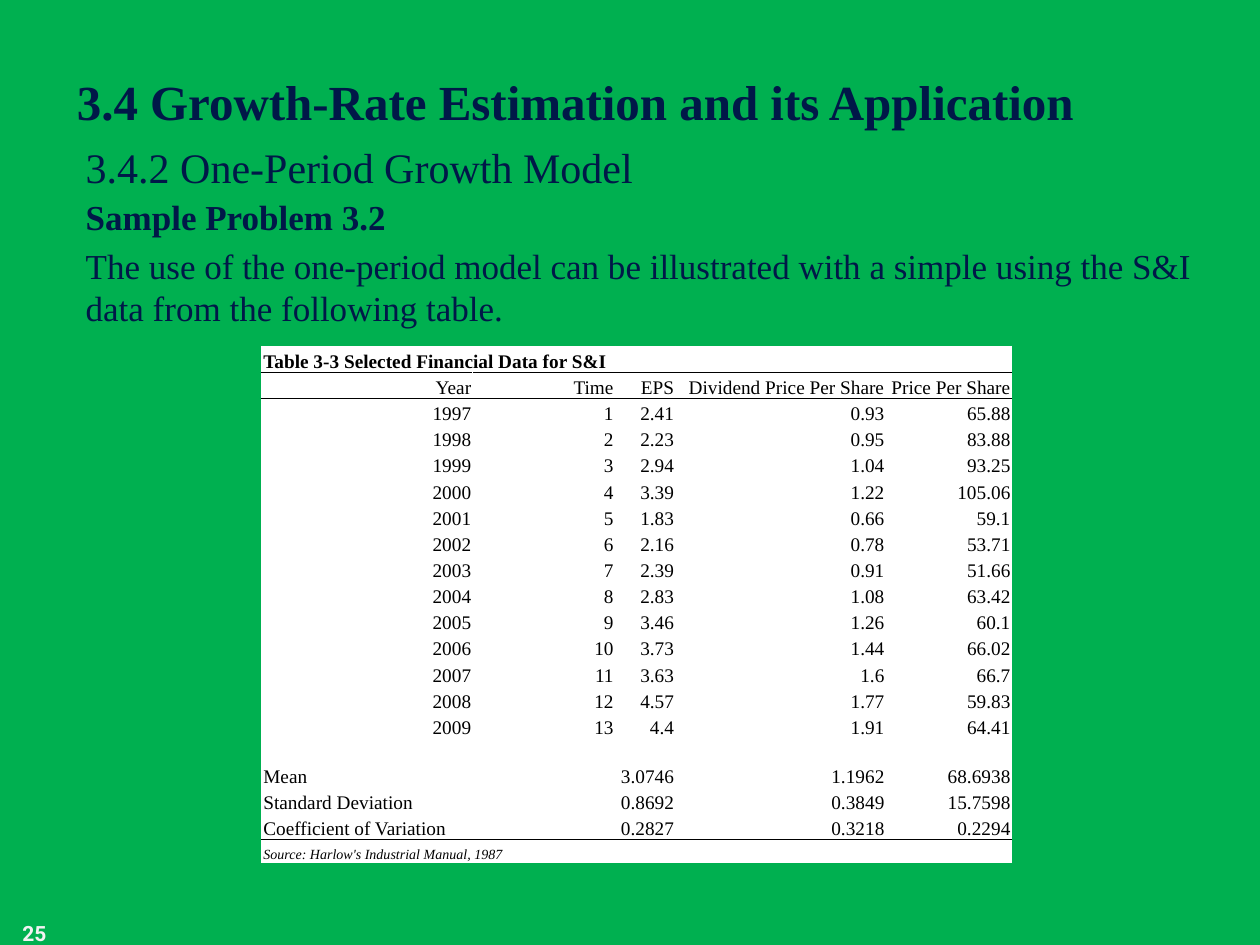
from pptx import Presentation, util as u
from pptx.dml.color import RGBColor
from pptx.enum import text as t
from pptx.oxml import parse_xml
from pptx.oxml.ns import nsdecls

SERIF = "Times New Roman"
NAVY, BLACK, WHITE = "001848", "000000", "FFFFFF"


def color(target, value):
    """Colour a font, or a fill made solid first."""
    if hasattr(target, "solid"):
        target.solid()
        target.fore_color.rgb = RGBColor.from_string(value)
    else:
        target.color.rgb = RGBColor.from_string(value)


def write(paragraph, words, size, value, bold=False, italic=False, name=SERIF):
    run = paragraph.add_run()
    run.text = words
    run.font.name, run.font.size = name, u.Pt(size)
    run.font.bold, run.font.italic = bold, italic
    color(run.font, value)


presentation = Presentation()
presentation.slide_width, presentation.slide_height = u.Inches(10), u.Inches(7.5)
slide = presentation.slides.add_slide(presentation.slide_layouts[3])
color(slide.background.fill, "00B050")

# Title, body and section heading
title, body, section = slide.placeholders
boxes = [
    (body, (0.58, 1.5, 9.08, 5.67), t.MSO_ANCHOR.TOP, t.PP_ALIGN.LEFT, [
        ("Sample Problem 3.2", 20, True),
        ("The use of the one-period model can be illustrated with a simple "
         "using the S&I data from the following table.", 20, False)]),
    (section, (0.58, 1.07, 9.02, 0.5), t.MSO_ANCHOR.TOP, t.PP_ALIGN.LEFT, [
        ("3.4.2 One-Period Growth Model", 24, False)]),
    (title, (0.51, 0.45, 9, 0.7), t.MSO_ANCHOR.MIDDLE, t.PP_ALIGN.LEFT, [
        ("3.4 Growth-Rate Estimation and its Application", 28, True)]),
]
for shape, place, anchor, align, lines in boxes:
    shape.left, shape.top, shape.width, shape.height = map(u.Inches, place)
    frame = shape.text_frame
    frame.auto_size, frame.word_wrap = t.MSO_AUTO_SIZE.NONE, True
    frame.vertical_anchor = anchor
    for index, (words, size, bold) in enumerate(lines):
        paragraph = frame.paragraphs[0] if index == 0 else frame.add_paragraph()
        properties = paragraph._p.get_or_add_pPr()
        properties.set("marL", "0")
        properties.set("indent", "0")
        properties.append(parse_xml(f"<a:buNone {nsdecls('a')}/>"))
        paragraph.alignment = align
        paragraph.space_before = u.Pt(0.2 * size if index else 0)
        write(paragraph, words, size, NAVY, bold)
body.text_frame.paragraphs[0].alignment = t.PP_ALIGN.JUSTIFY

# Page number
number = slide.shapes.add_textbox(*map(u.Inches, (0.08, 7.26, 2.33, 0.4)))
number.text_frame.word_wrap = True
write(number.text_frame.paragraphs[0], "25", 12, "F2F2F2", bold=True, name="Roboto")

# Financial data
history = [
    ("2.41", "0.93", "65.88"), ("2.23", "0.95", "83.88"), ("2.94", "1.04", "93.25"),
    ("3.39", "1.22", "105.06"), ("1.83", "0.66", "59.1"), ("2.16", "0.78", "53.71"),
    ("2.39", "0.91", "51.66"), ("2.83", "1.08", "63.42"), ("3.46", "1.26", "60.1"),
    ("3.73", "1.44", "66.02"), ("3.63", "1.6", "66.7"), ("4.57", "1.77", "59.83"),
    ("4.4", "1.91", "64.41"),
]
blank = ("",) * 4
rows = [
    ("Table 3-3 Selected Financial Data for S&I", *blank),
    ("Year", "Time", "EPS", "Dividend Price Per Share", "Price Per Share"),
    *[(str(1996 + time), str(time), *values)
      for time, values in enumerate(history, start=1)],
    ("", *blank),
    ("Mean", "", "3.0746", "1.1962", "68.6938"),
    ("Standard Deviation", "", "0.8692", "0.3849", "15.7598"),
    ("Coefficient of Variation", "", "0.2827", "0.3218", "0.2294"),
    ("Source: Harlow's Industrial Manual, 1987", *blank),
]
widths = (1.67, 1.13, 0.48, 1.67, 1)
last = len(rows) - 1
gap = 2 + len(history)
ruled_below = {0, 1, last - 1}
table_height, thin_row = 4.1, 0.18
full_row = (table_height - 2 * thin_row) / (len(rows) - 2)

table = slide.shapes.add_table(
    len(rows), len(widths), u.Inches(2.08), u.Inches(2.75),
    u.Inches(sum(widths)), u.Inches(table_height)).table
table.first_row = table.horz_banding = False
for column, width in zip(table.columns, widths):
    column.width = u.Inches(width)

for r, values in enumerate(rows):
    table.rows[r].height = u.Inches(thin_row if r in (gap, last) else full_row)
    for c, value in enumerate(values):
        cell = table.cell(r, c)
        cell.margin_left = cell.margin_right = cell.margin_top = u.Inches(0.01)
        cell.margin_bottom = 0
        cell.vertical_anchor = t.MSO_ANCHOR.BOTTOM
        paragraph = cell.text_frame.paragraphs[0]
        paragraph.font.size = u.Pt(8)
        if value:
            label = c == 0 and (r == 0 or r > gap)
            paragraph.alignment = t.PP_ALIGN.LEFT if label else t.PP_ALIGN.RIGHT
            write(paragraph, value, 8 if r == last else 11, BLACK,
                  bold=r == 0, italic=r == last)
        # Rules above and below, before the fill as the schema asks
        for side, ruled in (("lnT", r - 1 in ruled_below), ("lnB", r in ruled_below)):
            if ruled:
                cell._tc.get_or_add_tcPr().append(parse_xml(
                    f'<a:{side} {nsdecls("a")} w="{u.Pt(0.5)}"><a:solidFill>'
                    f'<a:srgbClr val="{BLACK}"/></a:solidFill></a:{side}>'))
        color(cell.fill, WHITE)

# Caption and source line span two columns
for r in (0, last):
    table.cell(r, 0).merge(table.cell(r, 1))

presentation.save("out.pptx")
